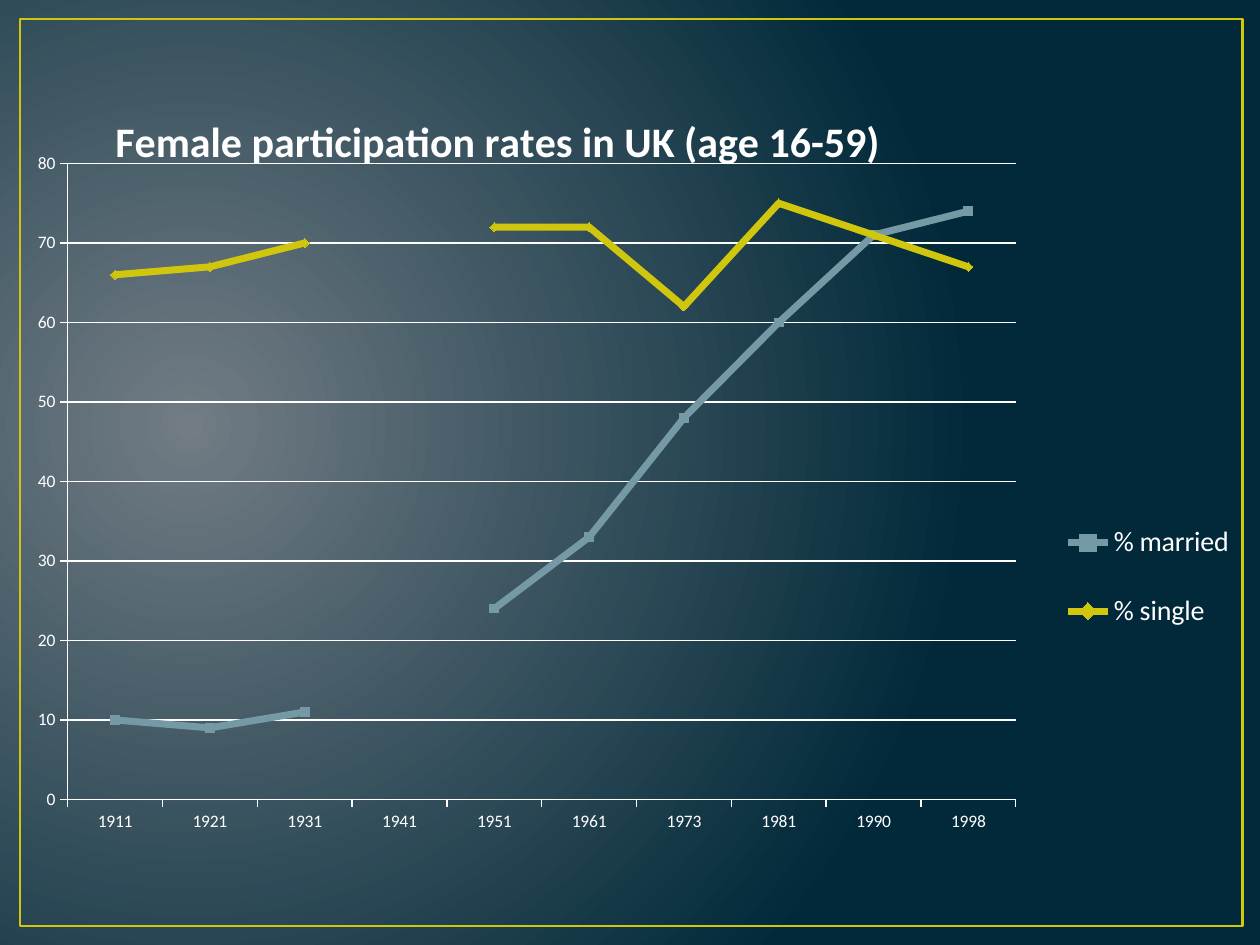
from lxml.etree import SubElement
from pptx import Presentation
from pptx.chart.data import CategoryChartData
from pptx.dml.color import RGBColor
from pptx.enum.chart import XL_CHART_TYPE as ChartType, XL_LEGEND_POSITION as LegendPosition
from pptx.enum.chart import XL_MARKER_STYLE as Marker, XL_TICK_MARK as TickMark
from pptx.enum.shapes import MSO_SHAPE as Shape
from pptx.oxml.ns import qn
from pptx.util import Inches, Pt


def color(hex_string):
    return RGBColor.from_string(hex_string)


def set_layout(element, index, **values):
    for old_layout in element.findall(qn("c:layout")):
        element.remove(old_layout)
    layout = SubElement(element, qn("c:layout"))
    element.insert(index, layout)
    manual = SubElement(layout, qn("c:manualLayout"))
    for name, value in values.items():
        SubElement(manual, qn(f"c:{name}")).set("val", str(value))


WHITE, YELLOW, BLUE = "FFFFFF", "CFC60D", "759AA5"

presentation = Presentation()
presentation.slide_width = Inches(10)
presentation.slide_height = Inches(7.5)
slide = presentation.slides.add_slide(presentation.slide_layouts[6])

background = slide.background.fill
background.gradient()
for stop, position, shade in zip(background.gradient_stops, (0, 1), ("717C84", "01293A")):
    stop.position = position
    stop.color.rgb = color(shade)
gradient = slide.element.find(".//" + qn("a:gradFill"))
gradient.remove(gradient.find(qn("a:lin")))
circle = SubElement(gradient, qn("a:path"), {"path": "circle"})
SubElement(circle, qn("a:fillToRect"), {"l": "15000", "t": "50000", "r": "85000", "b": "60000"})

frame = slide.shapes.add_shape(Shape.RECTANGLE, Inches(0.16), Inches(0.15), Inches(9.7), Inches(7.2))
frame.shadow.inherit = False
frame.fill.background()
frame.line.color.rgb = color(YELLOW)
frame.line.width = Pt(1.5)

data = CategoryChartData()
data.categories = ["1911", "1921", "1931", "1941", "1951", "1961", "1973", "1981", "1990", "1998"]
data.add_series("% married", [10, 9, 11, None, 24, 33, 48, 60, 71, 74])
data.add_series("% single", [66, 67, 70, None, 72, 72, 62, 75, 71, 67])
chart = slide.shapes.add_chart(
    ChartType.LINE_MARKERS, Inches(0.18), Inches(0.78), Inches(9.66), Inches(5.89), data
).chart
chart.font.name = "Calibri"
chart.font.size = Pt(10)
chart.font.color.rgb = color(WHITE)

chart.has_title = True
title = chart.chart_title
title.text_frame.text = "Female participation rates in UK (age 16-59)"
title_font = title.text_frame.paragraphs[0].runs[0].font
title_font.name = "Calibri"
title_font.size = Pt(24)
title_font.bold = True
title_font.color.rgb = color(WHITE)
title.include_in_layout = False

chart.has_legend = True
legend = chart.legend
legend.position = LegendPosition.RIGHT
legend.include_in_layout = False
legend.font.name = "Calibri"
legend.font.size = Pt(16)
legend.font.color.rgb = color(WHITE)

value_axis, category_axis = chart.value_axis, chart.category_axis
value_axis.minimum_scale = 0
value_axis.maximum_scale = 80
value_axis.major_unit = 10
value_axis.has_major_gridlines = True
for axis in (value_axis, category_axis):
    axis.major_tick_mark = TickMark.OUTSIDE
    axis.minor_tick_mark = TickMark.NONE
for line in (value_axis.major_gridlines.format.line, value_axis.format.line, category_axis.format.line):
    line.color.rgb = color(WHITE)
    line.width = Pt(0.75)

plot = chart.plots[0]
plot.vary_by_categories = False
for series, shade, style in zip(plot.series, (BLUE, YELLOW), (Marker.SQUARE, Marker.DIAMOND)):
    series.smooth = False
    series.format.line.color.rgb = color(shade)
    series.format.line.width = Pt(4)
    series.marker.style = style
    series.marker.size = 5
    series.marker.format.fill.solid()
    series.marker.format.fill.fore_color.rgb = color(shade)
    series.marker.format.line.color.rgb = color(shade)

chart_element = chart.element.find(qn("c:chart"))
set_layout(chart_element.find(qn("c:title")), 1, xMode="edge", yMode="edge", x=0.07, y=0.01)
set_layout(chart_element.find(qn("c:plotArea")), 0, layoutTarget="inner",
           xMode="edge", yMode="edge", x=0.037, y=0.088, w=0.779, h=0.857)
set_layout(chart_element.find(qn("c:legend")), 1,
           xMode="edge", yMode="edge", x=0.85, y=0.53, w=0.15, h=0.23)

presentation.save("out.pptx")
